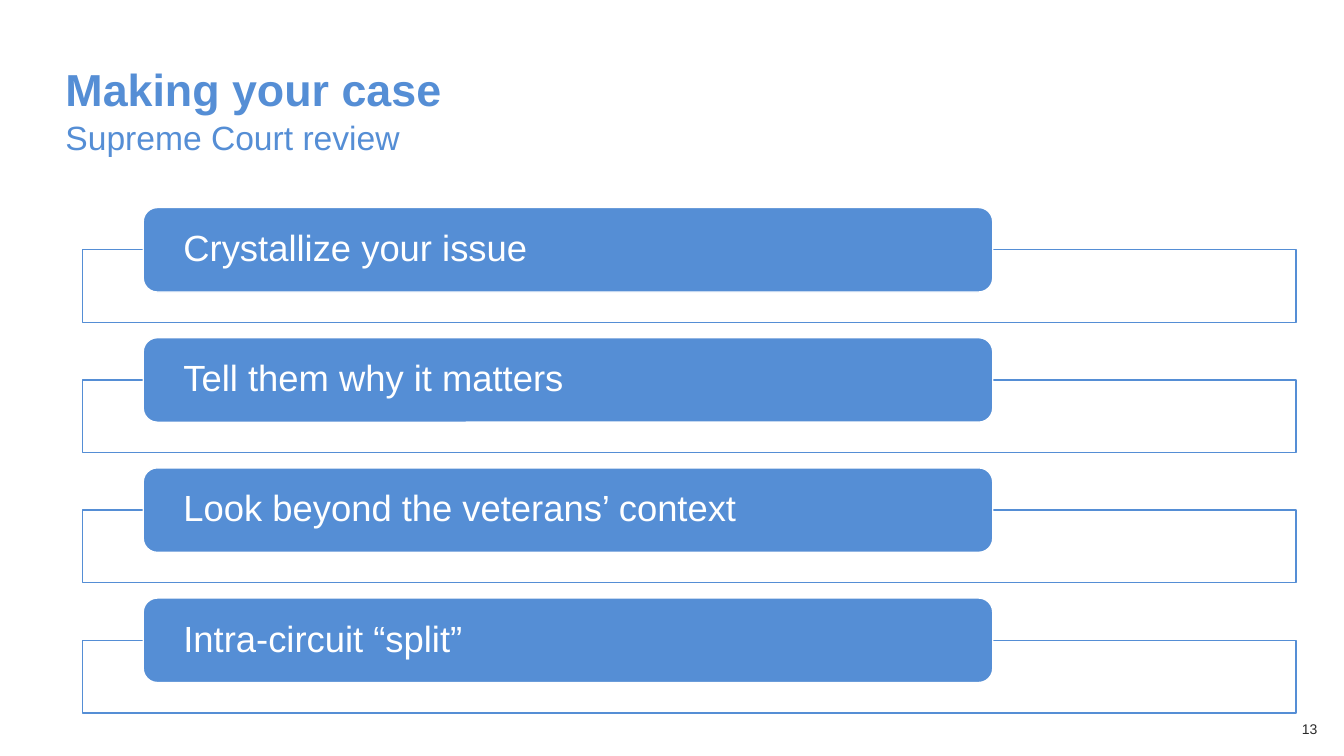
import pptx
import pptx.util
import pptx.dml.color
import pptx.enum.shapes
import pptx.enum.text
import pptx.oxml.ns
from lxml import etree

Cm, Pt = pptx.util.Cm, pptx.util.Pt
SHAPE = pptx.enum.shapes.MSO_SHAPE
ALIGN = pptx.enum.text.PP_ALIGN
ANCHOR = pptx.enum.text.MSO_ANCHOR

# Content
TITLE = "Making your case"
SUBTITLE = "Supreme Court review"
POINTS = [
    "Crystallize your issue",
    "Tell them why it matters",
    "Look beyond the veterans’ context",
    "Intra-circuit “split”",
]
PAGE = "13"

THEME = {
    "font": "Arial", "blue": "558ED5", "white": "FFFFFF", "dark": "2A2A2A",
    "title": 32, "subtitle": 24, "point": 26, "page": 10,
}

# Layout in centimetres: left, top, width, height
TITLE_BOX = (1.4, 1.47, 30.78, 1.68)
SUBTITLE_BOX = (1.4, 2.72, 30.78, 1.4)
PAGE_BOX = (32.18, 18.03, 1.65, 1.02)
BAR = (3.61, 5.23, 21.41, 2.13)
FRAME_LEFT, FRAME_WIDTH, FRAME_HEIGHT = 2.08, 30.58, 1.83
PITCH = 3.28
BAR_INSET = 0.91


def rgb(name):
    return pptx.dml.color.RGBColor.from_string(THEME[name])


def write(s, text, role, color, bold=False, anchor=ANCHOR.TOP, **paragraph):
    tf = s.text_frame
    tf.word_wrap = True
    tf.vertical_anchor = anchor
    p = tf.paragraphs[0]
    for name, value in {"alignment": ALIGN.LEFT, **paragraph}.items():
        setattr(p, name, value)
    r = p.add_run()
    r.text = text
    font = {"name": THEME["font"], "size": Pt(THEME[role]), "bold": bold}
    for name, value in font.items():
        setattr(r.font, name, value)
    r.font.color.rgb = rgb(color)


def add_text(shapes, box, *args, **kwargs):
    write(shapes.add_textbox(*map(Cm, box)), *args, **kwargs)


def add_box(shapes, kind, box, fill, line):
    s = shapes.add_shape(kind, *map(Cm, box))
    s.shadow.inherit = False
    s.fill.solid()
    s.fill.fore_color.rgb = rgb(fill)
    s.line.color.rgb = rgb(line)
    s.line.width = Pt(1)
    return s


def set_opacity(s, percent):
    qn = pptx.oxml.ns.qn
    color = s.fill._xPr.find(qn("a:solidFill")).find(qn("a:srgbClr"))
    etree.SubElement(color, qn("a:alpha")).set("val", str(percent * 1000))


def main():
    prs = pptx.Presentation()
    prs.slide_width, prs.slide_height = Cm(33.87), Cm(19.05)
    shapes = prs.slides.add_slide(prs.slide_layouts[6]).shapes

    # Heading and page number
    add_text(shapes, PAGE_BOX, PAGE, "page", "dark", alignment=ALIGN.CENTER)
    add_text(shapes, SUBTITLE_BOX, SUBTITLE, "subtitle", "blue",
             line_spacing=1.1, space_after=Pt(4))
    add_text(shapes, TITLE_BOX, TITLE, "title", "blue", bold=True,
             anchor=ANCHOR.MIDDLE, line_spacing=0.9)

    # Each frame starts at the middle of its bar
    left, first_top, width, height = BAR
    for i, point in enumerate(POINTS):
        top = first_top + i * PITCH
        frame_box = (FRAME_LEFT, top + height / 2, FRAME_WIDTH, FRAME_HEIGHT)
        frame = add_box(shapes, SHAPE.RECTANGLE, frame_box, "white", "blue")
        set_opacity(frame, 90)
        bar = add_box(shapes, SHAPE.ROUNDED_RECTANGLE,
                      (left, top, width, height), "blue", "white")
        tf = bar.text_frame
        tf.margin_left = tf.margin_right = Cm(BAR_INSET)
        tf.margin_top = tf.margin_bottom = 0
        write(bar, point, "point", "white", anchor=ANCHOR.MIDDLE,
              line_spacing=0.9)

    prs.save("out.pptx")


if __name__ == "__main__":
    main()
